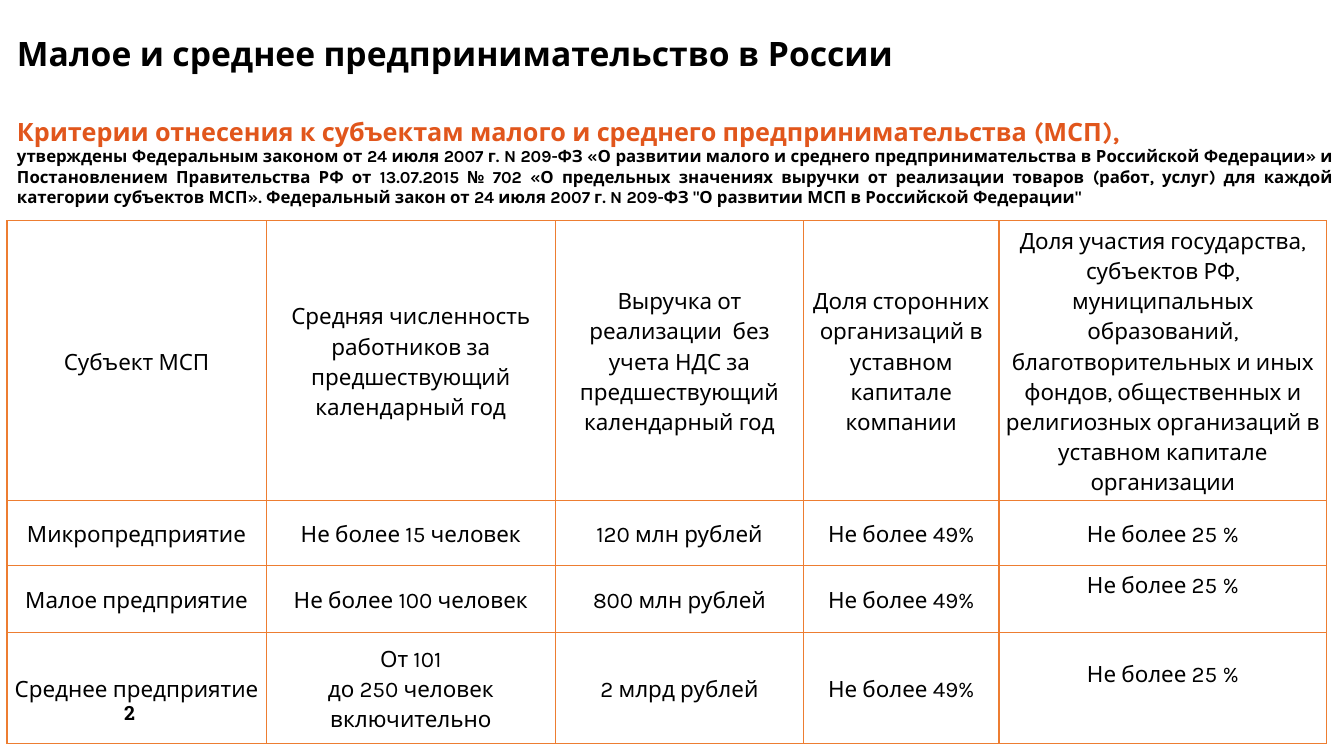
import pptx
import pptx.util
import pptx.dml.color
import pptx.enum.text
import pptx.oxml
import pptx.oxml.ns
from dataclasses import dataclass

Inches = pptx.util.Inches
Align = pptx.enum.text.PP_ALIGN
Anchor = pptx.enum.text.MSO_ANCHOR
Fit = pptx.enum.text.MSO_AUTO_SIZE


@dataclass(frozen=True)
class Theme:
    ink: str = "000000"
    accent: str = "E1561C"
    border: str = "ED7D31"
    body: str = "Karla"
    slab: str = "Roboto Slab"
    title: int = 24
    lead: int = 18
    cell: int = 16
    page: int = 14
    note: int = 12


theme = Theme()


def add_run(para, text, size, color=theme.ink, face=theme.body, bold=True):
    run = para.add_run()
    run.text = text
    run.font.size = pptx.util.Pt(size)
    run.font.name = face
    run.font.bold = bold
    run.font.color.rgb = pptx.dml.color.RGBColor.from_string(color)


def add_box(left, top, width, height, fit=Fit.SHAPE_TO_FIT_TEXT):
    box = slide.shapes.add_textbox(Inches(left), Inches(top), Inches(width), Inches(height))
    frame = box.text_frame
    frame.word_wrap = True
    frame.auto_size = fit
    return frame


deck = pptx.Presentation()
deck.slide_width, deck.slide_height = Inches(13.33), Inches(7.5)
slide = deck.slides.add_slide(deck.slide_layouts[6])

# Page number
page = add_box(1, 6.91, 0.57, 0.33, Fit.NONE)
page.vertical_anchor = Anchor.MIDDLE
page.paragraphs[0].alignment = Align.CENTER
add_run(page.paragraphs[0], "2", theme.page, face=theme.slab)

# Criteria heading and its legal basis
lead = add_box(0.07, 1.1, 13.26, 1.01)
add_run(lead.paragraphs[0],
        "Критерии отнесения к субъектам малого и среднего предпринимательства (МСП),",
        theme.lead, theme.accent)
basis = lead.add_paragraph()
basis.alignment = Align.JUSTIFY
add_run(basis,
        "утверждены Федеральным законом от 24 июля 2007 г. N 209-ФЗ «О развитии малого и "
        "среднего предпринимательства в Российской Федерации» и Постановлением Правительства "
        "РФ от 13.07.2015 № 702 «О предельных значениях выручки от реализации товаров (работ, "
        "услуг) для каждой категории субъектов МСП». Федеральный закон от 24 июля 2007 г. "
        'N 209-ФЗ "О развитии МСП в Российской Федерации"',
        theme.note)

# Title
title = add_box(0.07, 0.28, 9.35, 0.51)
add_run(title.paragraphs[0], "Малое и среднее предпринимательство в России", theme.title)

# Criteria table; "|" marks a line break inside a cell
widths = [2.57, 2.87, 2.46, 1.94, 3.25]
heights = [2.02, 0.64, 0.67, 1.1]
rows = [
    ["Субъект МСП",
     "Средняя численность работников за предшествующий календарный год",
     "Выручка от реализации  без учета НДС за предшествующий календарный год",
     "Доля сторонних организаций в уставном капитале компании",
     "Доля участия государства, субъектов РФ, муниципальных образований, "
     "благотворительных и иных фондов, общественных и религиозных организаций "
     "в уставном капитале организации"],
    ["Микропредприятие", "Не более 15 человек", "120 млн рублей",
     "Не более 49%", "Не более 25 %"],
    ["Малое предприятие", "Не более 100 человек", "800 млн рублей",
     "Не более 49%", "Не более 25 %"],
    ["Среднее предприятие", "От 101|до 250 человек включительно", "2 млрд рублей",
     "Не более 49%", "Не более 25 %"],
]
raised = {(2, 4), (3, 4)}  # cells whose text sits above the middle

table = slide.shapes.add_table(len(rows), len(widths), Inches(0.07), Inches(2.19),
                               Inches(sum(widths)), Inches(sum(heights))).table
table.first_row = table.horz_banding = False
for col, width in zip(table.columns, widths):
    col.width = Inches(width)
for row, height in zip(table.rows, heights):
    row.height = Inches(height)

for i, texts in enumerate(rows):
    for j, text in enumerate(texts):
        cell = table.cell(i, j)
        cell.vertical_anchor = Anchor.MIDDLE
        cell.margin_left = cell.margin_right = cell.margin_top = Inches(0.01)
        cell.margin_bottom = Inches(0.31 if (i, j) in raised else 0.01)
        para = cell.text_frame.paragraphs[0]
        para.alignment = Align.CENTER
        para.line_spacing = 1.15
        for k, line in enumerate(text.split("|")):
            if k:
                para.add_line_break()
            add_run(para, line, theme.cell, bold=False)

        # Borders come before the fill in the cell properties
        props = cell._tc.get_or_add_tcPr()
        for side in ("lnL", "lnR", "lnT", "lnB"):
            props.append(pptx.oxml.parse_xml(
                f'<a:{side} {pptx.oxml.ns.nsdecls("a")} w="12700"><a:solidFill>'
                f'<a:srgbClr val="{theme.border}"/></a:solidFill></a:{side}>'))
        cell.fill.background()

deck.save("out.pptx")
